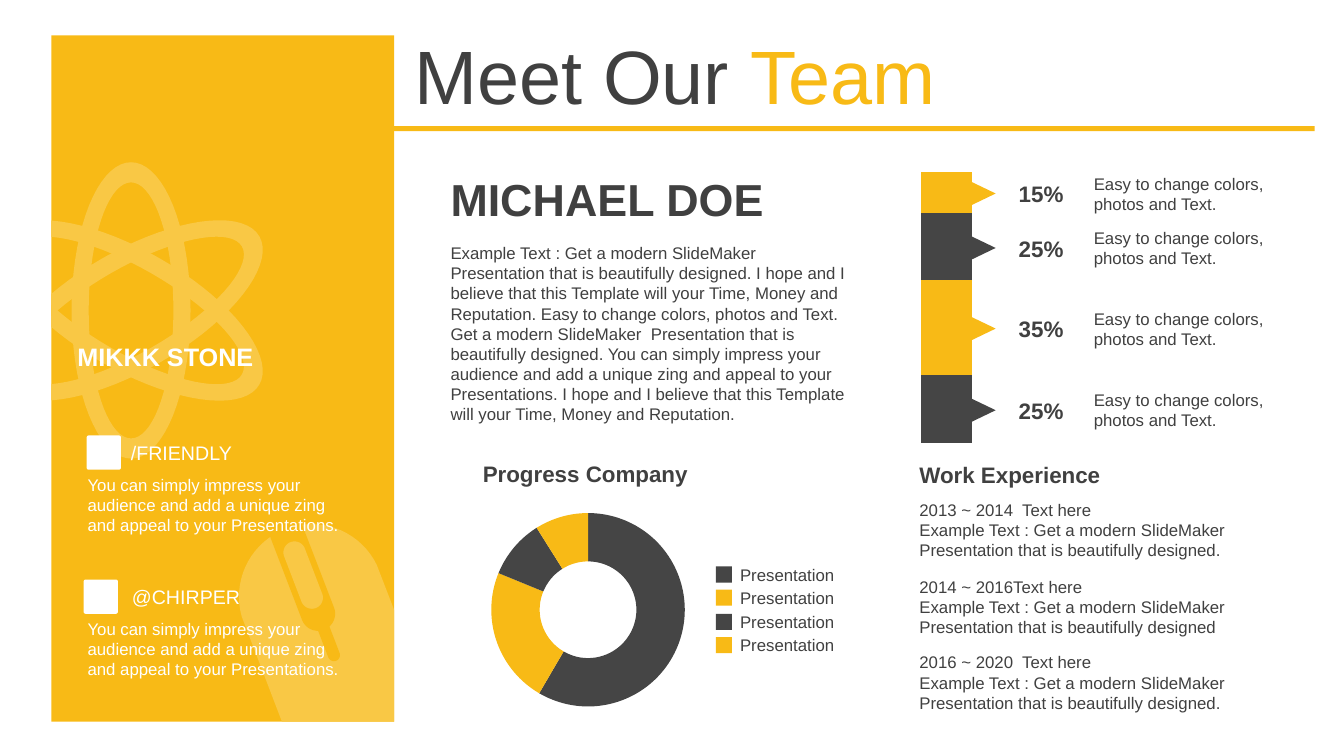
from dataclasses import dataclass
from math import cos, pi, radians, sin

from lxml import etree
from pptx import Presentation
from pptx import util as u
from pptx.chart import data as cd
from pptx.dml import color as dc
from pptx.enum import chart as ch, shapes, text
from pptx.oxml import ns

PX = 9144


@dataclass(frozen=True)
class Theme:
    """Colours, type sizes and font of the slide."""
    gold: str = "F8BA16"
    pale: str = "F9C845"
    dark: str = "454545"
    ink: str = "404040"
    white: str = "FFFFFF"
    font: str = "Arial"
    huge: int = 54
    name: int = 32
    mate: int = 18
    head: int = 16
    link: int = 14
    body: int = 12


T = Theme()
LINE = "Easy to change colors, photos and Text."
PITCH = "You can simply impress your audience and add a unique zing and appeal to your Presentations."
HOPE = "I hope and I believe that this Template will your Time, Money and Reputation."
MAKE = "Get a modern SlideMaker  Presentation that is beautifully designed"
BIO = f"Example Text : {MAKE}. {HOPE} {LINE} {MAKE}. {PITCH} {HOPE}"
JOBS = [("2013 ~ 2014  Text here", "."), ("2014 ~ 2016Text here", ""), ("2016 ~ 2020  Text here", ".")]
STACK = [(15, 43), (25, 71), (35, 100), (25, 71)]


def rgb(hue):
    """Turn a hex string into a colour."""
    return dc.RGBColor.from_string(hue)


def paint(part, hue):
    """Fill a shape flat, with no line or shadow."""
    part.shadow.inherit = False
    part.fill.solid()
    part.fill.fore_color.rgb = rgb(hue)
    part.line.fill.background()
    return part


def block(page, kind, x, y, w, h, hue):
    """Add a flat preset shape."""
    return paint(page.shapes.add_shape(kind, x * PX, y * PX, w * PX, h * PX), hue)


def write(page, x, y, w, h, paras, size, hue=T.ink, bold=False, mid=False, align=None, inset=10, lead=None):
    """Add a text box; each paragraph is a list of (words, colour) runs or a string."""
    frame = page.shapes.add_textbox(x * PX, y * PX, w * PX, h * PX).text_frame
    frame.word_wrap = True
    frame.margin_left = frame.margin_right = inset * PX
    if mid:
        frame.vertical_anchor = text.MSO_ANCHOR.MIDDLE
    for i, runs in enumerate(paras):
        para = frame.add_paragraph() if i else frame.paragraphs[0]
        para.alignment = align
        para.line_spacing = lead
        for words, tint in [(runs, hue)] if isinstance(runs, str) else runs:
            run = para.add_run()
            run.text = words
            run.font.name, run.font.size, run.font.bold = T.font, u.Pt(size), bold
            run.font.color.rgb = rgb(tint)


def turn(dots, x, y, angle):
    """Rotate points by degrees and move them to a centre."""
    c, s = cos(radians(angle)), sin(radians(angle))
    return [(x + a * c - b * s, y + a * s + b * c) for a, b in dots]


def oval(rx, ry, steps=72):
    """Give the points of an ellipse around zero."""
    arc = [2 * pi * k / steps for k in range(steps)]
    return [(rx * cos(t), ry * sin(t)) for t in arc]


def pill(top, end, r):
    """Give the points of an upright capsule between two end centres."""
    return [(a, b + (end if b >= 0 else top)) for a, b in oval(r, r)]


def clip(dots, x, y, w, h):
    """Cut a convex loop to a box, one side at a time."""
    for axis, edge, sign in ((0, x, 1), (0, x + w, -1), (1, y, 1), (1, y + h, -1)):
        kept = []
        for p, q in zip(dots[-1:] + dots[:-1], dots):
            dp, dq = (sign * (d[axis] - edge) for d in (p, q))
            if dp * dq < 0:
                t = dp / (dp - dq)
                kept.append((p[0] + t * (q[0] - p[0]), p[1] + t * (q[1] - p[1])))
            if dq >= 0:
                kept.append(q)
        dots = kept
    return dots


def trace(page, loops, box, hue):
    """Draw loops as one shape cut to a box; an inner loop makes a hole."""
    pen = None
    for loop in loops:
        dots = [(round(a * PX), round(b * PX)) for a, b in clip(loop, *box)]
        if pen is None:
            pen = page.shapes.build_freeform(*dots[0], scale=1.0)
        else:
            pen.move_to(*dots[0])
        pen.add_line_segments(dots[1:], close=True)
    paint(pen.convert_to_shape(), hue)


def atom(page, x, y, box):
    """Draw three crossed orbits around a centre."""
    for angle in (0, 60, 120):
        loops = [turn(oval(rx, ry), x, y, angle) for rx, ry in ((59, 147), (42, 127))]
        trace(page, loops, box, T.pale)


def mouse(page, x, y, box):
    """Draw a tilted mouse: body, button gap, cord slit and wheel."""
    body, gap, slit, wheel = (0, 260, 72), (-75, 18, 17), (20, 62, 6), (-47, 1, 11)
    for part, hue in ((body, T.pale), (gap, T.gold), (slit, T.gold), (wheel, T.pale)):
        trace(page, [turn(pill(*part), x, y, -21)], box, hue)


def plot(page, kind, x, y, w, h, rows, area):
    """Add a bare chart whose plot area is a share of its box."""
    data = cd.CategoryChartData()
    data.categories = [str(i + 1) for i in range(len(rows[0]))]
    for i, row in enumerate(rows):
        data.add_series(f"Series {i + 1}", row)
    chart = page.shapes.add_chart(kind, x * PX, y * PX, w * PX, h * PX, data).chart
    chart.has_legend = chart.has_title = False
    chart.font.name, chart.font.size = T.font, u.Pt(T.mate)
    chart.font.color.rgb = rgb("000000")
    zone = chart._chartSpace.find(".//" + ns.qn("c:plotArea"))
    for old in zone.findall(ns.qn("c:layout")):
        zone.remove(old)
    lay = etree.Element(ns.qn("c:layout"))
    zone.insert(0, lay)
    hand = etree.SubElement(lay, ns.qn("c:manualLayout"))
    keys = ("layoutTarget", "xMode", "yMode", "x", "y", "w", "h")
    for key, val in zip(keys, ("inner", "edge", "edge", *area)):
        etree.SubElement(hand, ns.qn("c:" + key)).set("val", str(val))
    return chart


def panel(page, x, y, w, h):
    """Draw the gold side panel with its emblems and contacts."""
    block(page, shapes.MSO_SHAPE.RECTANGLE, x, y, w, h, T.gold)
    atom(page, x + 79, y + 273, (x, y, w, h))
    mouse(page, x + 258, y + 557, (x, y, w, h))
    for top, left, shift, label in ((397, 35, 69, "/FRIENDLY"), (540, 32, 70, "@CHIRPER")):
        write(page, x + shift, y + top, 134, 34, [label], T.link, T.white, mid=True)
        badge = block(page, shapes.MSO_SHAPE.ROUNDED_RECTANGLE, x + left, y + top, 34, 34, T.white)
        badge.adjustments[0] = 0.06
        write(page, x + 26, y + top + 34, 281, 71, [PITCH], T.body, T.white)
    write(page, x + 16, y + 299, 218, 40, ["MIKKK STONE"], T.mate, T.white, bold=True)


def title(page, x, y, w, h):
    """Write the title above its gold rule."""
    write(page, x, y, w, h, [[("Meet Our ", T.ink), ("Team", T.gold)]], T.huge)
    block(page, shapes.MSO_SHAPE.RECTANGLE, x - 31, y + h, 934, 5, T.gold)


def about(page, x, y, w):
    """Write the member's name and story."""
    write(page, x, y, w, 47, ["MICHAEL DOE"], T.name, bold=True, mid=True, lead=0.9)
    write(page, x, y + 59, w - 6, 192, [BIO], T.body)


def ring(page, x, y):
    """Draw the progress ring with its heading and key."""
    write(page, x + 6, y, 263, 31, ["Progress Company"], T.head, bold=True, lead=0.9)
    chart = plot(page, ch.XL_CHART_TYPE.DOUGHNUT, x, y + 40, 243, 220, [(59, 23, 10, 9)],
                 (0.1, 0.06, 0.79, 0.88))
    for i in range(4):
        hue = (T.dark, T.gold)[i % 2]
        fill = chart.plots[0].series[0].points[i].format.fill
        fill.solid()
        fill.fore_color.rgb = rgb(hue)
        drop = round(i * 23.4)
        block(page, shapes.MSO_SHAPE.RECTANGLE, x + 247, y + 107 + drop, 16, 16, hue)
        write(page, x + 271, y + 100 + drop, 114, 30, ["Presentation"], T.body, inset=0)


def tower(page, x, y, w, h):
    """Draw the stacked column with a pointer and note for each share."""
    peak = 342
    chart = plot(page, ch.XL_CHART_TYPE.COLUMN_STACKED, x, y, w, h,
                 [(size,) for _, size in STACK[::-1]], (0.05, 0.03, 0.91, 0.95))
    axis = chart.value_axis
    axis.minimum_scale, axis.maximum_scale = 0, peak
    axis.has_major_gridlines = axis.visible = chart.category_axis.visible = False
    bars = chart.plots[0]
    bars.gap_width, bars.overlap, bars.vary_by_categories = 170, 100, False
    for i, bar in enumerate(bars.series):
        bar.format.fill.solid()
        bar.format.fill.fore_color.rgb = rgb((T.dark, T.gold)[i % 2])
    unit = h * 0.95 / peak
    top = y + h * 0.98 - unit * sum(size for _, size in STACK)
    for i, (share, size) in enumerate(STACK):
        mid = round(top + unit * size / 2) + 1
        top += unit * size
        tip = block(page, shapes.MSO_SHAPE.ISOSCELES_TRIANGLE, x + 99, mid - 13, 25, 26, (T.gold, T.dark)[i % 2])
        tip.rotation = 90
        write(page, x + 125, mid - 18, 89, 37, [f"{share}%"], T.head, bold=True, align=text.PP_ALIGN.CENTER)
        write(page, x + 212, mid - 25, 205, 50, [LINE], T.body)


def work(page, x, y, w):
    """List the work history."""
    write(page, x, y, 252, 31, ["Work Experience"], T.head, bold=True, mid=True)
    for i, (when, stop) in enumerate(JOBS):
        write(page, x, y + 36 + round(i * 75.5), w, 71, [when, f"Example Text : {MAKE}{stop}"], T.body)


def main():
    """Build and save the slide."""
    deck = Presentation()
    deck.slide_width, deck.slide_height = 1333 * PX, 750 * PX
    page = deck.slides.add_slide(deck.slide_layouts[6])
    panel(page, 51, 35, 340, 681)
    ring(page, 463, 455)
    title(page, 401, 24, 908, 101)
    tower(page, 863, 107, 150, 339)
    about(page, 437, 177, 426)
    work(page, 902, 455, 392)
    deck.save("out.pptx")


if __name__ == "__main__":
    main()
